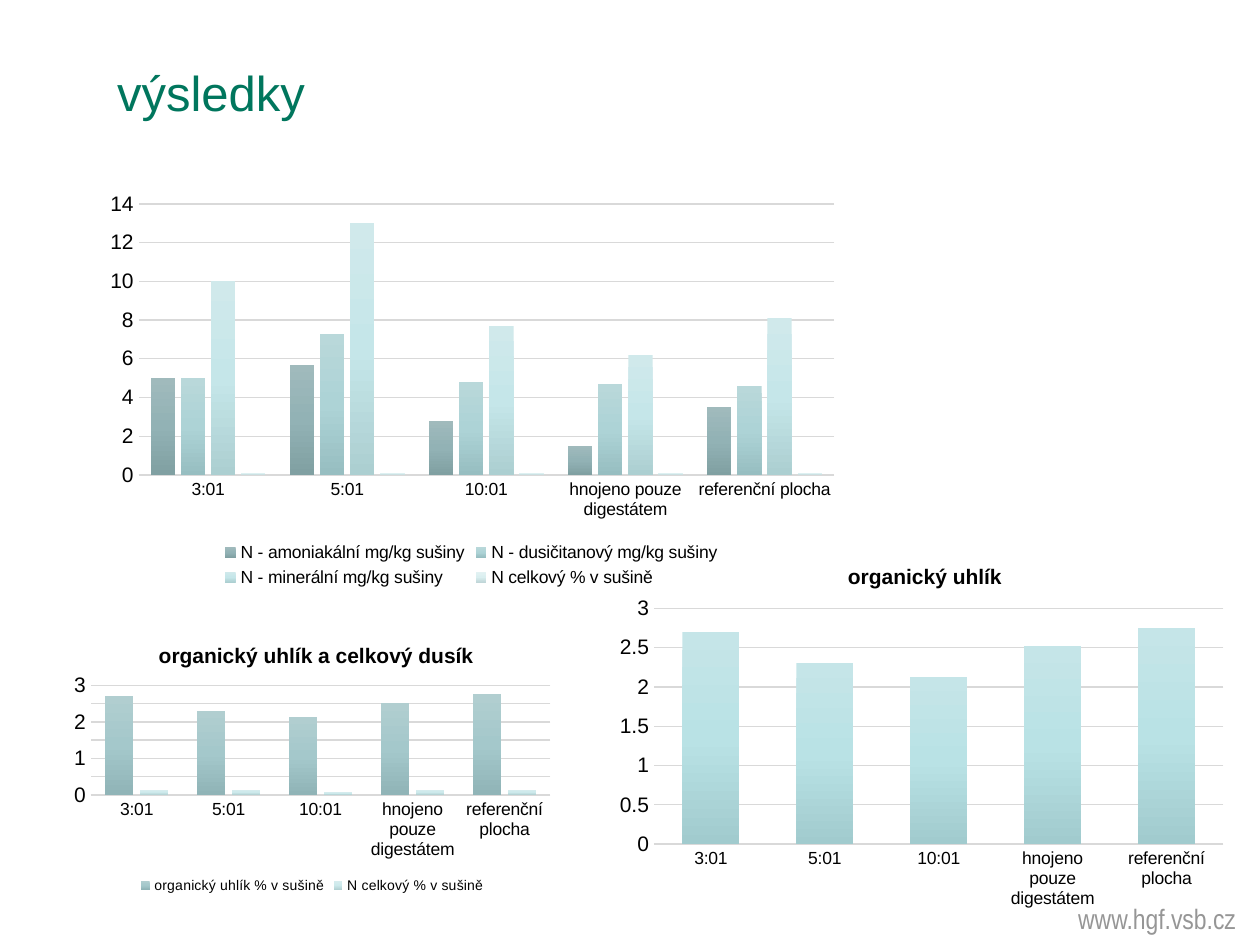
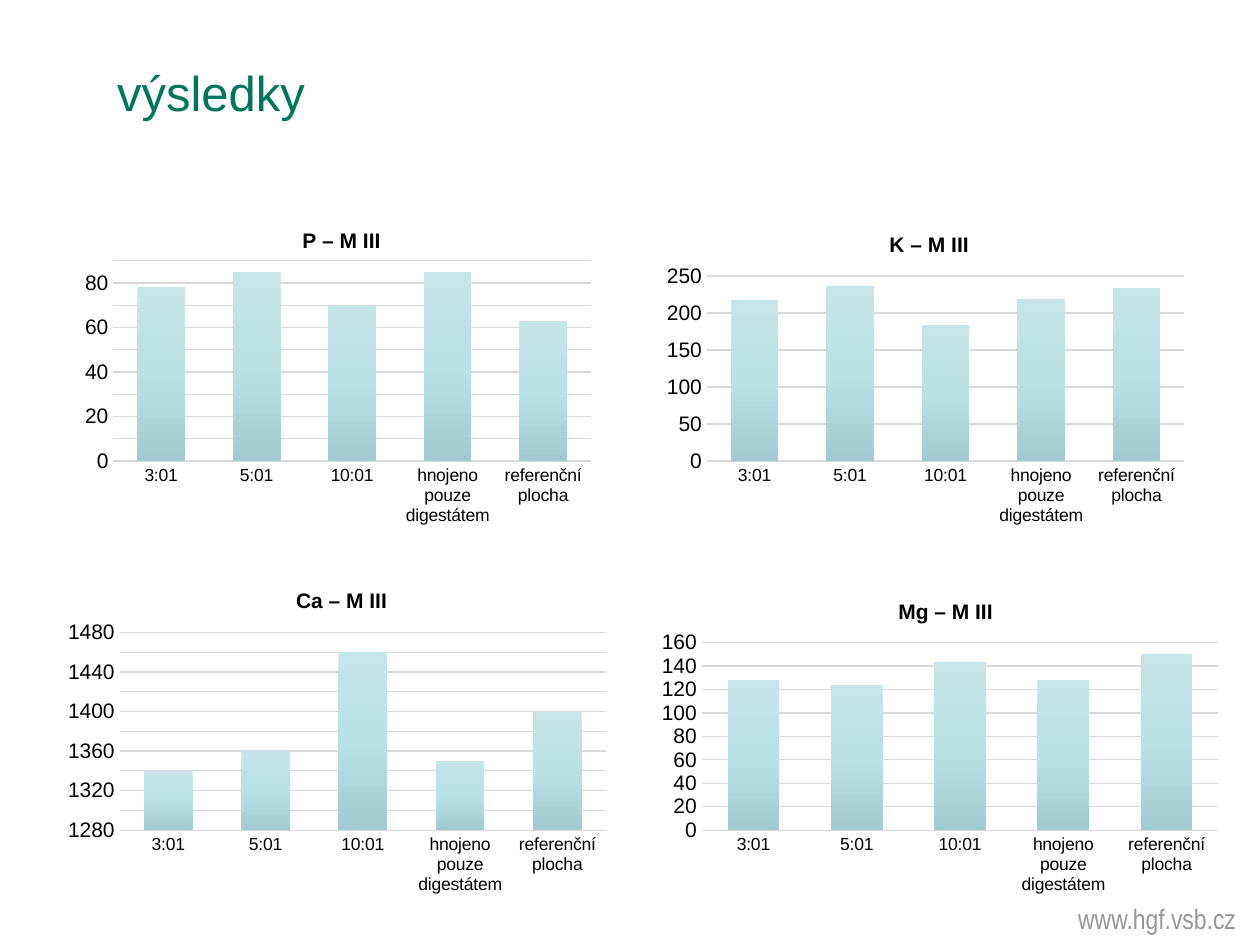
from copy import deepcopy

from lxml.etree import SubElement
from pptx import Presentation
from pptx.chart.data import CategoryChartData
from pptx.dml.color import RGBColor
from pptx.enum.chart import XL_CHART_TYPE, XL_LEGEND_POSITION, XL_TICK_MARK
from pptx.enum.text import MSO_ANCHOR, PP_ALIGN
from pptx.oxml.ns import qn
from pptx.util import Inches, Pt

GREEN, GREY, BLACK, RULE = "00765D", "969696", "000000", "D9D9D9"
FONT, FOOTER_FONT = "Arial", "Arial Narrow"
PLOTS = ["3:01", "5:01", "10:01", "hnojeno pouze digestátem", "referenční plocha"]
CARBON = [2.7, 2.31, 2.13, 2.52, 2.75]
CARBON_NAME = "organický uhlík % v sušině"
NITROGEN_NAME = "N celkový % v sušině"
SINGLE = ("C5E5E8", "B9E2E5", "A1CBCE")


def rgb(value):
    return RGBColor.from_string(value)


def style_font(font, size, color=BLACK, name=FONT, bold=False):
    font.size, font.name, font.bold = Pt(size), name, bold
    font.color.rgb = rgb(color)


def add_label(slide, box, text, size, color, name, align, anchor):
    tf = slide.shapes.add_textbox(*map(Inches, box)).text_frame
    tf.word_wrap = True
    tf.vertical_anchor = anchor
    tf.margin_left = tf.margin_right = tf.margin_top = tf.margin_bottom = 0
    p = tf.paragraphs[0]
    p.alignment = align
    r = p.add_run()
    r.text = text
    style_font(r.font, size, color, name)


def add_page(prs, title):
    slide = prs.slides.add_slide(prs.slide_layouts[6])
    add_label(slide, (6.64, 6.9, 3.17, 0.52), "www.hgf.vsb.cz", 16, GREY,
              FOOTER_FONT, PP_ALIGN.RIGHT, MSO_ANCHOR.BOTTOM)
    add_label(slide, (0.93, 0.5, 8.88, 0.64), title, 28, GREEN,
              FONT, PP_ALIGN.LEFT, MSO_ANCHOR.TOP)
    return slide


def set_layout(parent, **settings):
    layout = parent.find(qn("c:layout"))
    if layout is None:
        layout = SubElement(parent, qn("c:layout"))
        parent.insert(0, layout)
    manual = SubElement(layout, qn("c:manualLayout"))
    for key, value in settings.items():
        SubElement(manual, qn(f"c:{key}")).set("val", str(value))


def place_plot(chart, box, plot):
    left, top, width, height = box
    x, y, w, h = plot
    set_layout(chart._chartSpace.chart.plotArea, layoutTarget="inner",
               xMode="edge", yMode="edge", x=(x - left) / width,
               y=(y - top) / height, w=w / width, h=h / height)


def add_title(chart, box, text, left):
    title = chart.chart_title
    r = title.text_frame.paragraphs[0].add_run()
    r.text = text
    style_font(r.font, 12, bold=True)
    set_layout(title._element, xMode="edge", yMode="edge",
               x=(left - box[0]) / box[2], y=0.14 / box[3])
    title.include_in_layout = False


def style_axes(chart, low, high, step):
    cat, val = chart.category_axis, chart.value_axis
    for axis, size in ((cat, 10), (val, 12)):
        axis.major_tick_mark = axis.minor_tick_mark = XL_TICK_MARK.NONE
        style_font(axis.tick_labels.font, size)
    val.minimum_scale, val.maximum_scale, val.major_unit = low, high, step
    val.has_major_gridlines = True
    val.format.line.fill.background()
    for line in (cat.format.line, val.major_gridlines.format.line):
        line.color.rgb = rgb(RULE)
        line.width = Pt(0.75)


def fill_gradient(series, colors):
    fill = series.format.fill
    fill.gradient()
    fill.gradient_angle = 270
    stops = series._element.find(".//" + qn("a:gsLst"))
    stops.insert(1, deepcopy(stops[0]))
    for stop, position, color in zip(fill.gradient_stops, (0, 0.5, 1), colors):
        stop.position = position
        stop.color.rgb = rgb(color)


def add_columns(slide, box, plot, scale, series, title=None, title_left=0, legend_size=None):
    data = CategoryChartData()
    data.categories = PLOTS
    for name, values, _ in series:
        data.add_series(name, values)
    chart = slide.shapes.add_chart(
        XL_CHART_TYPE.COLUMN_CLUSTERED, *map(Inches, box), data).chart
    style_font(chart.font, 10)
    chart.has_title = title is not None
    if title:
        add_title(chart, box, title, title_left)
    chart.has_legend = legend_size is not None
    if legend_size:
        chart.legend.position = XL_LEGEND_POSITION.BOTTOM
        chart.legend.include_in_layout = False
        style_font(chart.legend.font, legend_size)
    style_axes(chart, *scale)
    columns = chart.plots[0]
    columns.gap_width, columns.overlap = 100, -24
    columns.vary_by_categories = False
    for item, (_, _, colors) in zip(columns.series, series):
        fill_gradient(item, colors)
    place_plot(chart, box, plot)


def nitrogen_carbon_slide(prs):
    slide = add_page(prs, "výsledky")
    nitrogen = [
        ("N - amoniakální mg/kg sušiny", [5, 5.7, 2.8, 1.5, 3.5], ("A0BABC", "92B2B5", "80A0A2")),
        ("N - dusičitanový mg/kg sušiny", [5, 7.3, 4.8, 4.7, 4.6], ("B9D8DA", "ADD3D6", "97BEC1")),
        ("N - minerální mg/kg sušiny", [10, 13, 7.7, 6.2, 8.1], ("D0E9EB", "C5E6E9", "ACCFD1")),
        (NITROGEN_NAME, [0.1] * 5, ("E3F2F3", "DAEFF0", "C0D6D8")),
    ]
    add_columns(slide, (0.75, 1.47, 5.98, 3.23), (1.1, 1.62, 5.52, 2.15),
                (0, 14, 2), nitrogen, legend_size=10)
    add_columns(slide, (4.82, 4.3, 4.99, 2.98), (5.19, 4.83, 4.52, 1.87),
                (0, 3, 0.5), [(CARBON_NAME, CARBON, SINGLE)], "organický uhlík", 6.7)
    both = [
        (CARBON_NAME, CARBON, ("B1CED0", "A4C8CB", "90B4B7")),
        (NITROGEN_NAME, [0.13, 0.14, 0.08, 0.14, 0.14], ("D6ECEE", "CCE9EB", "B3D1D3")),
    ]
    add_columns(slide, (0.51, 4.93, 3.94, 2.2), (0.72, 5.44, 3.65, 0.87),
                (0, 3, 0.5), both, "organický uhlík a celkový dusík", 1.23, 8)


def minerals_slide(prs):
    slide = add_page(prs, "výsledky")
    minerals = [
        ("P", [78, 85, 70, 85, 63], (0, 90, 10),
         (0.59, 1.64, 4.17, 2.58), (0.9, 2.07, 3.79, 1.59), 2.37),
        ("K", [217, 237, 184, 219, 234], (0, 250, 50),
         (5.21, 1.67, 4.28, 2.55), (5.61, 2.19, 3.79, 1.47), 7.03),
        ("Ca", [1340, 1360, 1460, 1350, 1400], (1280, 1480, 20),
         (0.45, 4.49, 4.45, 2.67), (0.95, 5.02, 3.86, 1.57), 2.32),
        ("Mg", [128, 124, 143, 128, 150], (0, 160, 20),
         (5.16, 4.58, 4.61, 2.57), (5.57, 5.1, 4.1, 1.49), 7.1),
    ]
    for element, values, scale, box, plot, title_left in minerals:
        name = f"{element} – M III"
        add_columns(slide, box, plot, scale, [(name, values, SINGLE)], name, title_left)


def main():
    prs = Presentation()
    prs.slide_width, prs.slide_height = Inches(10), Inches(7.5)
    nitrogen_carbon_slide(prs)
    minerals_slide(prs)
    prs.save("out.pptx")


if __name__ == "__main__":
    main()
